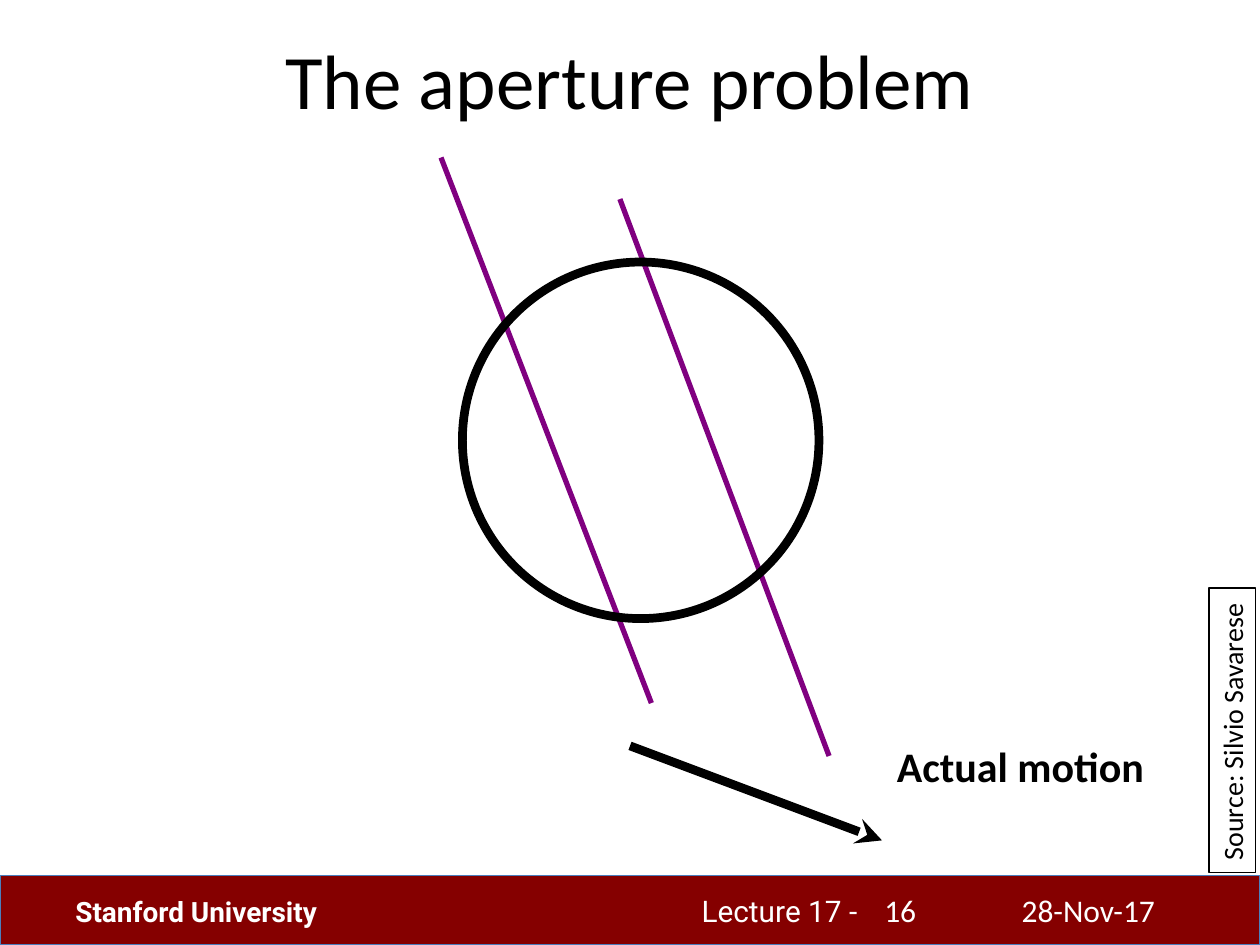
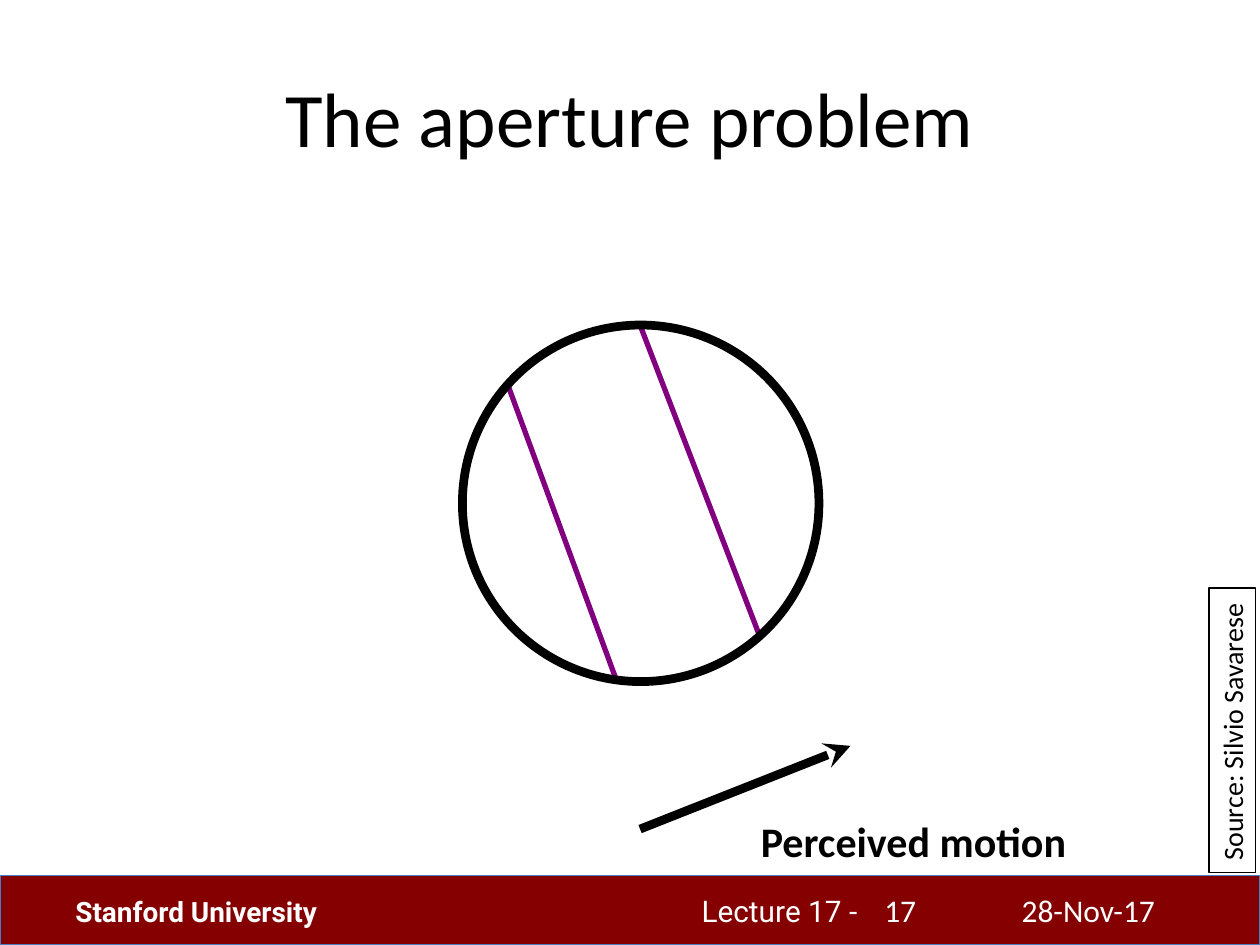
from lxml.etree import SubElement
from pptx import Presentation
from pptx.dml.color import RGBColor
from pptx.enum.shapes import MSO_CONNECTOR as Connector, MSO_SHAPE as Shape
from pptx.enum.text import MSO_ANCHOR as Anchor, PP_ALIGN as Align
from pptx.oxml.ns import qn
from pptx.util import Emu, Pt

PX = 9144
COLORS = {
    "black": "000000",
    "white": "FFFFFF",
    "band": "850000",
    "band_edge": "4B7EBC",
    "stripe": "800080",
}


class Deck:
    """Holds the shared style and the current slide, in px of 1/100 inch."""

    def __init__(self, width, height):
        self.prs = Presentation()
        self.prs.slide_width, self.prs.slide_height = self.emu(width, height)
        self.slide = None

    def emu(self, *lengths):
        return [Emu(length * PX) for length in lengths]

    def color(self, name):
        return RGBColor.from_string(COLORS[name])

    def new_slide(self):
        self.slide = self.prs.slides.add_slide(self.prs.slide_layouts[6])

    def shape(self, kind, box, edge, weight, fill=None):
        shape = self.slide.shapes.add_shape(kind, *self.emu(*box))
        shape.shadow.inherit = False
        if fill:
            shape.fill.solid()
            shape.fill.fore_color.rgb = self.color(fill)
        else:
            shape.fill.background()
        shape.line.color.rgb = self.color(edge)
        shape.line.width = Pt(weight)
        return shape

    def add_words(self, shape, words, size, color="black", font="Calibri", bold=False,
                  align=Align.LEFT, anchor=Anchor.TOP, wrap=True):
        frame = shape.text_frame
        frame.word_wrap = wrap
        frame.vertical_anchor = anchor
        paragraph = frame.paragraphs[0]
        paragraph.alignment = align
        run = paragraph.add_run()
        run.text = words
        run.font.name = font
        run.font.size = Pt(size)
        run.font.bold = bold
        run.font.color.rgb = self.color(color)

    def text(self, box, words, size, **style):
        self.add_words(self.slide.shapes.add_textbox(*self.emu(*box)), words, size, **style)

    def line(self, start, end, color, weight, arrow=False):
        line = self.slide.shapes.add_connector(
            Connector.STRAIGHT, *self.emu(*start, *end))
        line.line.color.rgb = self.color(color)
        line.line.width = Pt(weight)
        properties = line.element.find(qn("p:spPr"))
        if arrow:
            SubElement(properties.find(qn("a:ln")), qn("a:tailEnd"), type="stealth")
        SubElement(properties, qn("a:effectLst"))

    def title(self, top, words):
        self.text((50, top, 900, 125), words, 44,
                  align=Align.CENTER, anchor=Anchor.MIDDLE)

    def footer(self, number):
        self.shape(Shape.RECTANGLE, (0, 695, 1000, 55), "band_edge", 0.75, "band")
        self.text((547, 704, 244, 37), "Lecture 17 -", 17, color="white", font="Roboto")
        self.text((50, 705, 242, 37), "Stanford University", 16,
                  color="white", font="Roboto", bold=True)
        self.text((801, 702, 174, 40), "28-Nov-17", 18, color="white")
        self.text((692, 702, 110, 40), str(number), 18, color="white")

    def source(self, words):
        credit = self.shape(Shape.RECTANGLE, (865, 561, 226, 37), "black", 0.75)
        credit.rotation = 270
        self.add_words(credit, words, 16, wrap=False)

    def aperture(self, top, stripes):
        for start, end in stripes:
            self.line(start, end, "stripe", 3)
        self.shape(Shape.OVAL, (367, top, 283, 283), "black", 5)

    def motion(self, start, end, label_box, label):
        self.line(start, end, "black", 5, arrow=True)
        self.text(label_box, label, 24, bold=True)


SLIDES = [
    {
        "number": 16,
        "title_top": 0,
        "aperture": (208, [((350, 125), (517, 558)), ((492, 158), (658, 600))]),
        "motion": ((500, 592), (700, 667), (702, 583, 242, 50), "Actual motion"),
    },
    {
        "number": 17,
        "title_top": 30,
        "aperture": (258, [((404, 308), (490, 542)), ((508, 258), (603, 505))]),
        "motion": ((508, 658), (675, 592), (594, 642, 282, 50), "Perceived motion"),
    },
]


def main():
    deck = Deck(1000, 750)
    for content in SLIDES:
        deck.new_slide()
        deck.footer(content["number"])
        deck.title(content["title_top"], "The aperture problem")
        deck.aperture(*content["aperture"])
        deck.motion(*content["motion"])
        deck.source("Source: Silvio Savarese")
    deck.prs.save("out.pptx")


if __name__ == "__main__":
    main()
